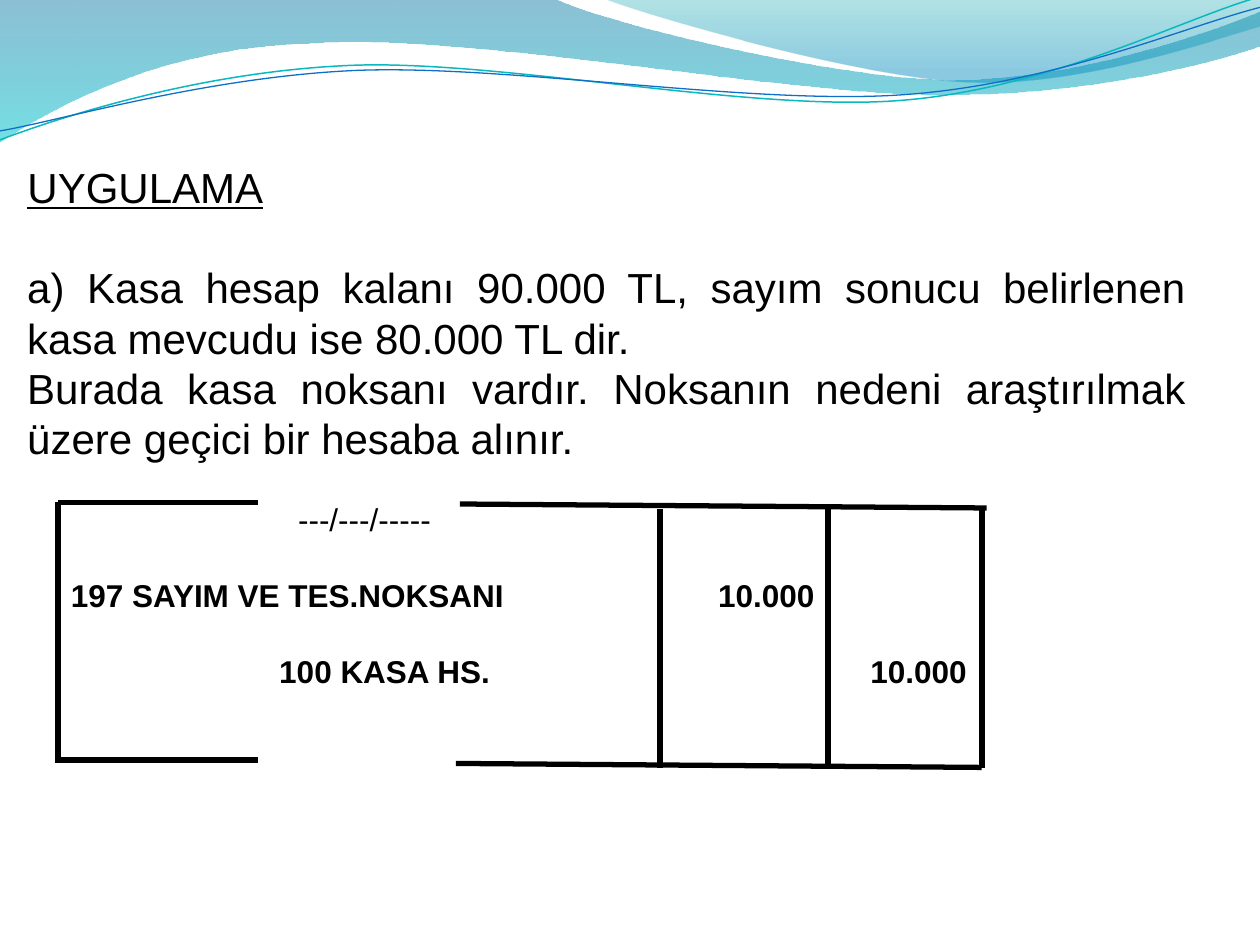
from dataclasses import dataclass

import pptx
import pptx.dml.color
import pptx.enum.shapes
import pptx.enum.text
import pptx.oxml
import pptx.oxml.ns
import pptx.util
from lxml import etree

Cm, Pt = pptx.util.Cm, pptx.util.Pt
ALIGN = pptx.enum.text.PP_ALIGN
qn = pptx.oxml.ns.qn


@dataclass(frozen=True)
class Theme:
    font: str = "Arial"
    ink: str = "000000"
    body_size: float = 24
    entry_size: float = 18
    leading: float = 1.2
    rule: float = 3
    column_rule: float = 3.5
    # Gradient stops: position, colour, opacity in percent
    wide_wave: tuple = ((0, "0074A1", 45), (1, "00C6CF", 55))
    corner_wave: tuple = ((0, "00A1A9", 30), (0.8, "008BBF", 45))
    teal_line: tuple = ("0AB8BF", 0.85)
    blue_line: tuple = ("0F6FC6", 0.75)


THEME = Theme()

# Outlines in cm: a step of one point is straight, a step of three is a Bézier curve.
WIDE_WAVE = [
    (0, 0), [(11.18, -0.03)],
    [(12.09, 0.43), (16.87, 1.6), (19.25, 1.6)],
    [(21.67, 1.6), (24.33, 0.66), (25.4, 0.23)],
    [(25.43, 0.91)],
    [(24.97, 1.12), (22.1, 1.93), (18.95, 1.91)],
    [(15.8, 1.91), (9.7, 0.71), (6.53, 0.86)],
    [(3.28, 0.91), (1.17, 2.11), (-0.03, 2.87)],
]
CORNER_WAVE = [
    (12.17, -0.03),
    [(12.93, 0.28), (17.32, 1.57), (19.53, 1.65)],
    [(21.74, 1.75), (24.41, 0.81), (25.4, 0.53)],
    [(25.4, 0)],
]
TEAL_LINE = [
    (0, 2.82),
    [(1.22, 2.36), (4.01, 1.45), (7.04, 1.32)],
    [(10.03, 1.19), (15.06, 2.26), (18.11, 2.03)],
    [(21.16, 1.8), (23.83, 0.38), (25.35, -0.05)],
]
BLUE_LINE = [
    (0, 2.64),
    [(1.19, 2.44), (4.17, 1.55), (7.19, 1.42)],
    [(10.24, 1.3), (15.16, 2.13), (18.21, 1.91)],
    [(21.23, 1.7), (23.9, 0.53), (25.4, 0.15)],
]


def rgb(value):
    return pptx.dml.color.RGBColor.from_string(value)


def add_outline(page, left, top, outline, close):
    """Build a freeform, then turn its three-point steps into Bézier curves."""
    start, *steps = outline
    builder = page.shapes.build_freeform(Cm(left + start[0]), Cm(top + start[1]))
    builder.add_line_segments(
        [(Cm(left + x), Cm(top + y)) for step in steps for x, y in step], close=close)
    shape = builder.convert_to_shape()
    shape.shadow.inherit = False
    segments = iter(list(shape._element.iter(qn("a:lnTo"))))
    for step in steps:
        first, *others = [next(segments) for _ in step]
        if others:
            first.tag = qn("a:cubicBezTo")
        for segment in others:
            first.append(segment[0])
            segment.getparent().remove(segment)
    return shape


def add_header_waves(page, left, top):
    for outline, stops in ((WIDE_WAVE, THEME.wide_wave), (CORNER_WAVE, THEME.corner_wave)):
        wave = add_outline(page, left, top, outline, close=True)
        wave.line.fill.background()
        wave.fill.gradient()
        wave.fill.gradient_angle = 270
        for stop, (position, colour, _) in zip(wave.fill.gradient_stops, stops):
            stop.position = position
            stop.color.rgb = rgb(colour)
        colours = wave._element.spPr.iter(qn("a:srgbClr"))
        for element, (_, _, opacity) in zip(colours, stops):
            etree.SubElement(element, qn("a:alpha"), val=str(opacity * 1000))
    for outline, (colour, width) in ((TEAL_LINE, THEME.teal_line), (BLUE_LINE, THEME.blue_line)):
        wave = add_outline(page, left, top, outline, close=False)
        wave.fill.background()
        wave.line.color.rgb = rgb(colour)
        wave.line.width = Pt(width)


def place(shape, left, top, width, height):
    shape.left, shape.top, shape.width, shape.height = map(Cm, (left, top, width, height))


def write(shape, text, size, align):
    frame = shape.text_frame
    frame.text = text
    frame.word_wrap = True
    frame.auto_size = pptx.enum.text.MSO_AUTO_SIZE.NONE
    frame.vertical_anchor = pptx.enum.text.MSO_ANCHOR.TOP
    for para in frame.paragraphs:
        para.alignment = align
        para.line_spacing = Pt(size * THEME.leading)
        for span in para.runs:
            span.font.name = THEME.font
            span.font.size = Pt(size)
            span.font.color.rgb = rgb(THEME.ink)
    return frame.paragraphs


def add_exercise(page, left, top, width):
    """Place the title and, one line below it, the problem."""
    title = page.shapes.title
    place(title, left, top, width, 1.27)
    heading, = write(title, "UYGULAMA", THEME.body_size, ALIGN.JUSTIFY)
    heading.runs[0].font.underline = True
    problem = page.shapes.add_textbox(0, 0, 0, 0)
    place(problem, left, top + 2.03, width, 4.32)
    write(problem,
          "a) Kasa hesap kalanı 90.000 TL, sayım sonucu belirlenen "
          "kasa mevcudu ise 80.000 TL dir.\n"
          "Burada kasa noksanı vardır. Noksanın nedeni araştırılmak "
          "üzere geçici bir hesaba alınır.",
          THEME.body_size, ALIGN.JUSTIFY)


def add_tab_stops(para, stops):
    tabs = etree.SubElement(para._p.get_or_add_pPr(), qn("a:tabLst"))
    for position, align in stops:
        etree.SubElement(tabs, qn("a:tab"), pos=str(Cm(position)), algn=align)


def add_rule(page, start, end, width):
    rule = page.shapes.add_connector(
        pptx.enum.shapes.MSO_CONNECTOR.STRAIGHT, *map(Cm, (*start, *end)))
    rule.line.color.rgb = rgb(THEME.ink)
    rule.line.width = Pt(width)
    etree.SubElement(rule._element.spPr, qn("a:effectLst"))


def add_journal_entry(page, left, top):
    debit, credit, right = 12.14, 15.52, 18.62
    rows = [  # text, tab stops, bold
        ("\t---/---/-----", [(4.58, "l")], False),
        ("197 SAYIM VE TES.NOKSANI\t10.000", [(14.99, "r")], True),
        ("\t100 KASA HS.\t10.000", [(4.2, "l"), (18.06, "r")], True),
    ]
    entry = page.shapes.add_textbox(0, 0, 0, 0)
    place(entry, left + 0.26, top - 0.04, right, 4.6)
    frame = entry.text_frame
    frame.margin_left = frame.margin_right = frame.margin_top = frame.margin_bottom = 0
    paras = write(entry, "\n".join(text for text, _, _ in rows), THEME.entry_size, ALIGN.LEFT)
    for para, (_, stops, bold) in zip(paras, rows):
        para.space_after = Pt(THEME.entry_size * THEME.leading)
        add_tab_stops(para, stops)
        for span in para.runs:
            span.font.bold = bold

    rules = [  # from x, from y, to x, to y, width
        (0, 0, 4.04, 0, THEME.rule),
        (8.1, 0.03, 18.72, 0.11, THEME.rule),
        (debit, 0.13, debit, 5.36, THEME.column_rule),
        (credit, 0.11, credit, 5.34, THEME.column_rule),
        (right, 0.13, right, 5.36, THEME.column_rule),
        (0, -0.02, 0, 5.26, THEME.column_rule),
        (0.03, 5.19, 4.04, 5.19, THEME.rule),
        (8.02, 5.26, right, 5.34, THEME.rule),
    ]
    for x1, y1, x2, y2, width in rules:
        add_rule(page, (left + x1, top + y1), (left + x2, top + y2), width)


def main():
    deck = pptx.Presentation()
    deck.slide_width, deck.slide_height = Cm(25.4), Cm(19.05)
    page = deck.slides.add_slide(deck.slide_layouts.get_by_name("Title Only"))
    add_header_waves(page, 0, 0)
    add_exercise(page, 0.3, 3.12, 23.85)
    add_journal_entry(page, 1.17, 10.13)
    deck.save("out.pptx")


if __name__ == "__main__":
    main()
